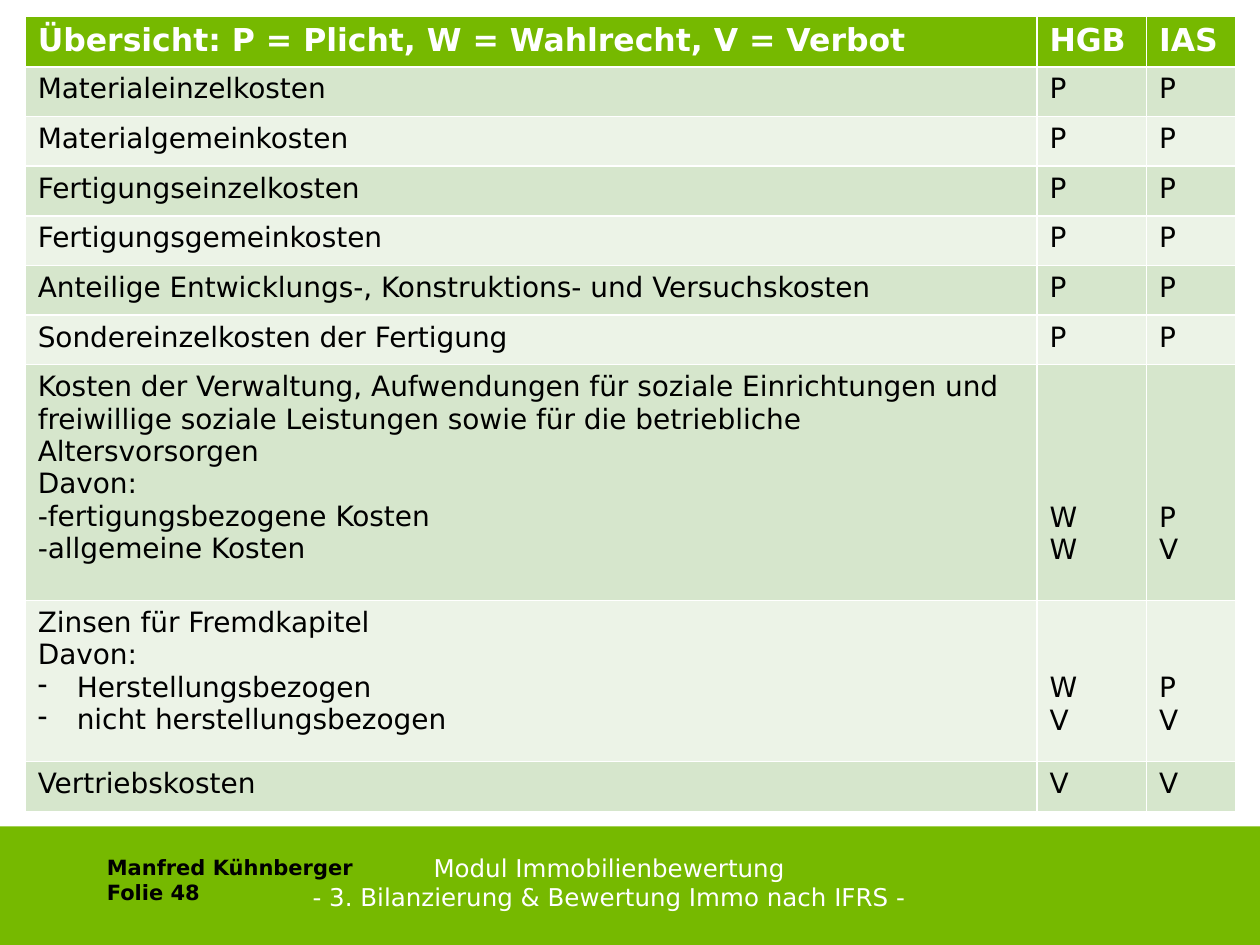
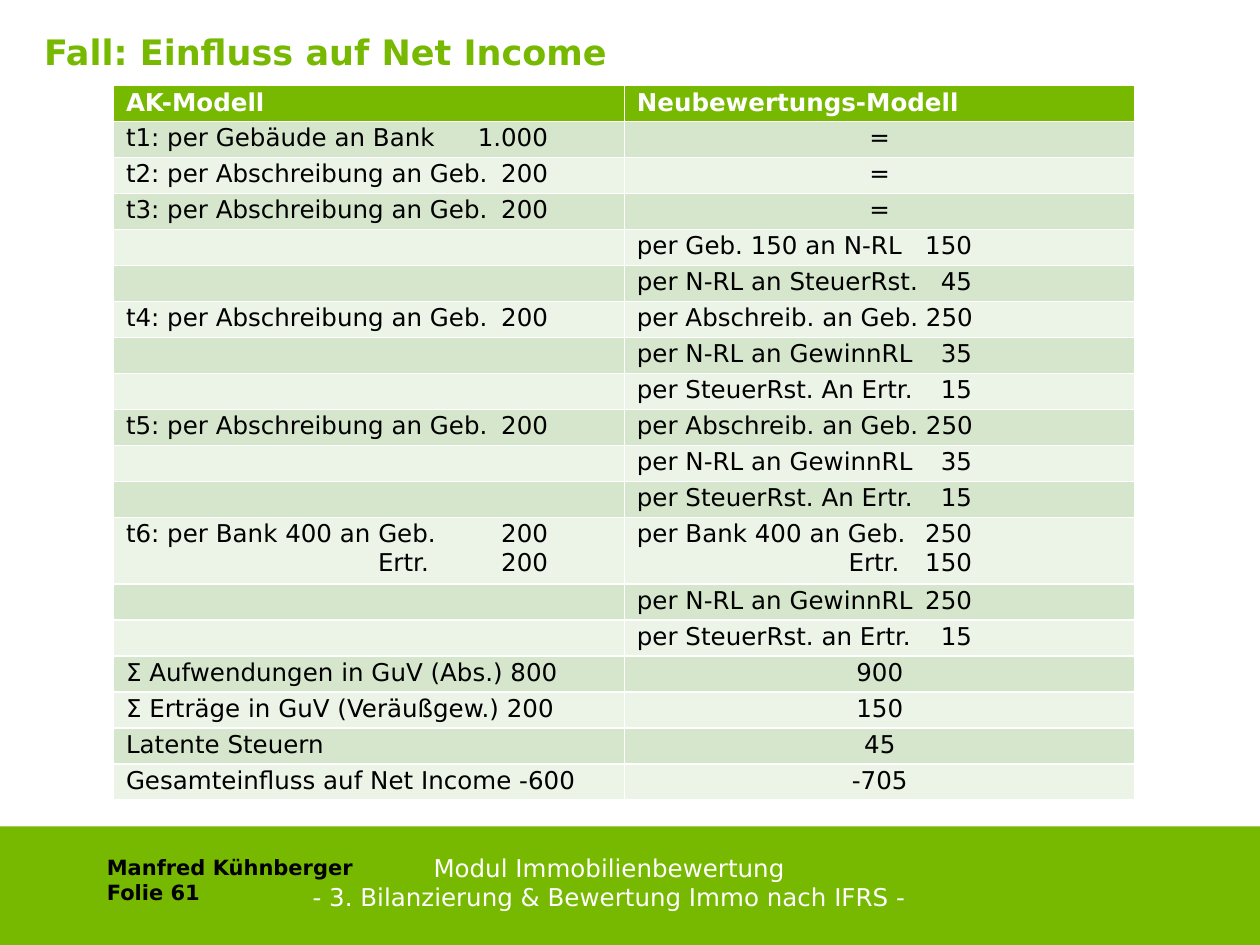
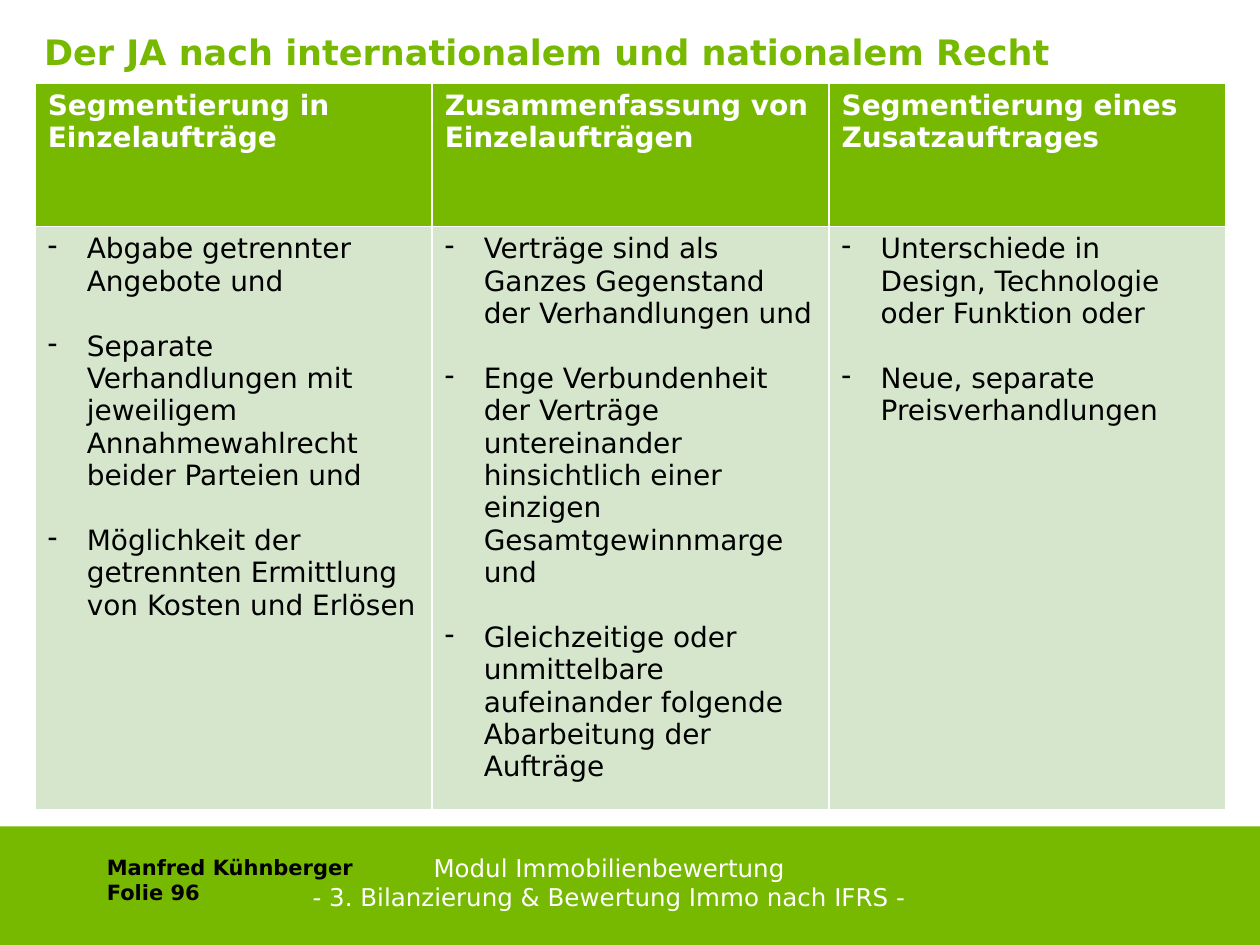
from lxml.etree import SubElement
from pptx import Presentation
from pptx.dml.color import RGBColor
from pptx.enum.shapes import MSO_SHAPE as Shape
from pptx.enum.text import MSO_ANCHOR as Anchor, PP_ALIGN as Align
from pptx.oxml.ns import qn
from pptx.util import Inches, Pt

GREEN = RGBColor(0x76, 0xB9, 0x00)
BAND_DARK = RGBColor(0xD6, 0xE6, 0xCC)
BAND_LIGHT = RGBColor(0xEC, 0xF3, 0xE7)
WHITE = RGBColor(0xFF, 0xFF, 0xFF)
BLACK = RGBColor(0, 0, 0)
FONT = "DejaVu Sans"
WIDTH, HEIGHT = 10, 7.5
TITLE_ONLY, BLANK = 5, 6
LINE = 1.164
BULLET_INDENT = 0.31

COSTS = [
    ("Übersicht: P = Plicht, W = Wahlrecht, V = Verbot", "HGB", "IAS"),
    ("Materialeinzelkosten", "P", "P"),
    ("Materialgemeinkosten", "P", "P"),
    ("Fertigungseinzelkosten", "P", "P"),
    ("Fertigungsgemeinkosten", "P", "P"),
    ("Anteilige Entwicklungs-, Konstruktions- und Versuchskosten", "P", "P"),
    ("Sondereinzelkosten der Fertigung", "P", "P"),
    ("Kosten der Verwaltung, Aufwendungen für soziale Einrichtungen und "
     "freiwillige soziale Leistungen sowie für die betriebliche Altersvorsorgen\n"
     "Davon:\n-fertigungsbezogene Kosten\n-allgemeine Kosten", "W\nW", "P\nV"),
    ("Zinsen für Fremdkapitel\nDavon:\n- Herstellungsbezogen\n"
     "- nicht herstellungsbezogen", "W\nV", "P\nV"),
    ("Vertriebskosten", "V", "V"),
]
ENTRIES = [
    ("AK-Modell", "Neubewertungs-Modell"),
    ("t1: per Gebäude an Bank\t1.000", "="),
    ("t2: per Abschreibung an Geb.\t200", "="),
    ("t3: per Abschreibung an Geb.\t200", "="),
    ("", "per Geb. 150 an N-RL\t150"),
    ("", "per N-RL an SteuerRst.\t45"),
    ("t4: per Abschreibung an Geb.\t200", "per Abschreib. an Geb. 250"),
    ("", "per N-RL an GewinnRL\t35"),
    ("", "per SteuerRst. An Ertr.\t15"),
    ("t5: per Abschreibung an Geb.\t200", "per Abschreib. an Geb. 250"),
    ("", "per N-RL an GewinnRL\t35"),
    ("", "per SteuerRst. An Ertr.\t15"),
    ("t6: per Bank 400 an Geb.\t200\n\tErtr.\t200",
     "per Bank 400 an Geb.\t250\n\tErtr.\t150"),
    ("", "per N-RL an GewinnRL\t250"),
    ("", "per SteuerRst. an Ertr.\t15"),
    ("Σ Aufwendungen in GuV (Abs.) 800", "900"),
    ("Σ Erträge in GuV (Veräußgew.) 200", "150"),
    ("Latente Steuern", "45"),
    ("Gesamteinfluss auf Net Income -600", "-705"),
]
CONTRACTS = [
    ("Segmentierung in Einzelaufträge", "Zusammenfassung von Einzelaufträgen",
     "Segmentierung eines Zusatzauftrages"),
    ("- Abgabe getrennter Angebote und\n"
     "- Separate Verhandlungen mit jeweiligem Annahmewahlrecht beider Parteien und\n"
     "- Möglichkeit der getrennten Ermittlung von Kosten und Erlösen",
     "- Verträge sind als Ganzes Gegenstand der Verhandlungen und\n"
     "- Enge Verbundenheit der Verträge untereinander hinsichtlich einer einzigen "
     "Gesamtgewinnmarge und\n"
     "- Gleichzeitige oder unmittelbare aufeinander folgende Abarbeitung der Aufträge",
     "- Unterschiede in Design, Technologie oder Funktion oder\n"
     "- Neue, separate Preisverhandlungen"),
]


def inches(*lengths):
    return [Inches(length) for length in lengths]


def format_runs(frame, size, color, bold=False, align=None):
    for para in frame.paragraphs:
        if align is not None:
            para.alignment = align
        for span in para.runs:
            font = span.font
            font.name, font.size, font.bold = FONT, Pt(size), bold
            font.color.rgb = color


def add_bullet(para):
    para.text = para.text.removeprefix("- ")
    props = para._p.get_or_add_pPr()
    props.set("marL", str(Inches(BULLET_INDENT)))
    props.set("indent", str(-Inches(BULLET_INDENT)))
    SubElement(props, qn("a:buFontTx"))
    SubElement(props, qn("a:buChar"), char="-")


def add_tabs(para, stops):
    tabs = SubElement(para._p.get_or_add_pPr(), qn("a:tabLst"))
    for position, side in stops:
        SubElement(tabs, qn("a:tab"), pos=str(Inches(position)), algn=side)


def add_label(page, box, text, size, color, bold=False, align=Align.LEFT):
    frame = page.shapes.add_textbox(*inches(*box)).text_frame
    frame.word_wrap = True
    frame.text = text
    format_runs(frame, size, color, bold, align)


def add_footer(page, number):
    top = 6.56
    band = page.shapes.add_shape(Shape.RECTANGLE, *inches(0, top, WIDTH, HEIGHT - top))
    band.shadow.inherit = False
    band.fill.solid()
    band.fill.fore_color.rgb = GREEN
    band.line.fill.background()
    add_label(page, (2.3, top + 0.16, 5.07, 0.57),
              "Modul Immobilienbewertung\n- 3. Bilanzierung & Bewertung Immo nach IFRS -",
              14, WHITE, align=Align.CENTER)
    add_label(page, (0.75, top + 0.17, 2.36, 0.49),
              f"Manfred Kühnberger\nFolie {number}", 12, BLACK, bold=True)


def add_page(deck, number, title=None):
    page = deck.slides.add_slide(deck.slide_layouts[TITLE_ONLY if title else BLANK])
    if title:
        heading = page.shapes.title
        heading.left, heading.top, heading.width, heading.height = inches(0.35, 0.21, 9.29, 0.39)
        frame = heading.text_frame
        frame.margin_left = frame.margin_top = frame.margin_right = frame.margin_bottom = 0
        frame.vertical_anchor = Anchor.MIDDLE
        frame.text = title
        format_runs(frame, 20, GREEN, True, Align.LEFT)
    add_footer(page, number)
    return page


def fill_cell(cell, text, row, size, padding):
    cell.margin_top = cell.margin_bottom = Inches(padding)
    cell.fill.solid()
    cell.fill.fore_color.rgb = (BAND_DARK if row % 2 else BAND_LIGHT) if row else GREEN
    frame = cell.text_frame
    frame.text = text
    for para in frame.paragraphs:
        if para.text.startswith("- "):
            add_bullet(para)
        if not para.text:
            SubElement(para._p, qn("a:endParaRPr"), sz=str(size * 100))
    format_runs(frame, size, BLACK if row else WHITE, bold=row == 0)


def add_grid(page, box, rows, shares, heights, size, header_size, padding=0.05):
    width, height = box[2:]
    table = page.shapes.add_table(len(rows), len(shares), *inches(*box)).table
    for column, share in zip(table.columns, shares):
        column.width = Inches(width * share / sum(shares))
    plain = (height - sum(heights.values())) / max(1, len(rows) - len(heights))
    for index, texts in enumerate(rows):
        table.rows[index].height = Inches(heights.get(index, plain))
        for column, text in enumerate(texts):
            fill_cell(table.cell(index, column), text, index,
                      size if index else header_size, padding)
    return table


def build_cost_overview(deck):
    page = add_page(deck, 48)
    table = add_grid(page, (0.2, 0.13, 9.61, 6.31), COSTS, (8.03, 0.87, 0.71),
                     {0: 0.4, 7: 1.87, 8: 1.28}, 16, 18)
    for row, lines_above in ((7, 4), (8, 2)):
        for column in (1, 2):
            table.cell(row, column).margin_top = Inches(0.05) + Pt(16 * LINE * lines_above)


def build_income_case(deck):
    page = add_page(deck, 61, "Fall: Einfluss auf Net Income")
    table = add_grid(page, (0.9, 0.68, 8.11, 5.67), ENTRIES, (1, 1), {12: 0.53}, 14, 14, 0.02)
    for column, (name_stop, amount_stop) in enumerate(((2, 3.35), (1.68, 2.66))):
        for row in range(1, len(ENTRIES)):
            for para in table.cell(row, column).text_frame.paragraphs:
                if "\t" in para.text:
                    stops = [(amount_stop, "r")]
                    if para.text.startswith("\t"):
                        stops.insert(0, (name_stop, "l"))
                    add_tabs(para, stops)
    for row in (*range(1, 4), *range(15, 19)):
        table.cell(row, 1).text_frame.paragraphs[0].alignment = Align.CENTER


def build_contract_rules(deck):
    page = add_page(deck, 96, "Der JA nach internationalem und nationalem Recht")
    table = add_grid(page, (0.28, 0.66, 9.45, 5.77), CONTRACTS, (1, 1, 1), {0: 1.14}, 16, 16)
    for column in range(3):
        for para in table.cell(1, column).text_frame.paragraphs[1:]:
            para.space_before = Pt(16 * LINE)


def main():
    deck = Presentation()
    deck.slide_width, deck.slide_height = inches(WIDTH, HEIGHT)
    build_cost_overview(deck)
    build_income_case(deck)
    build_contract_rules(deck)
    deck.save("out.pptx")


if __name__ == "__main__":
    main()
